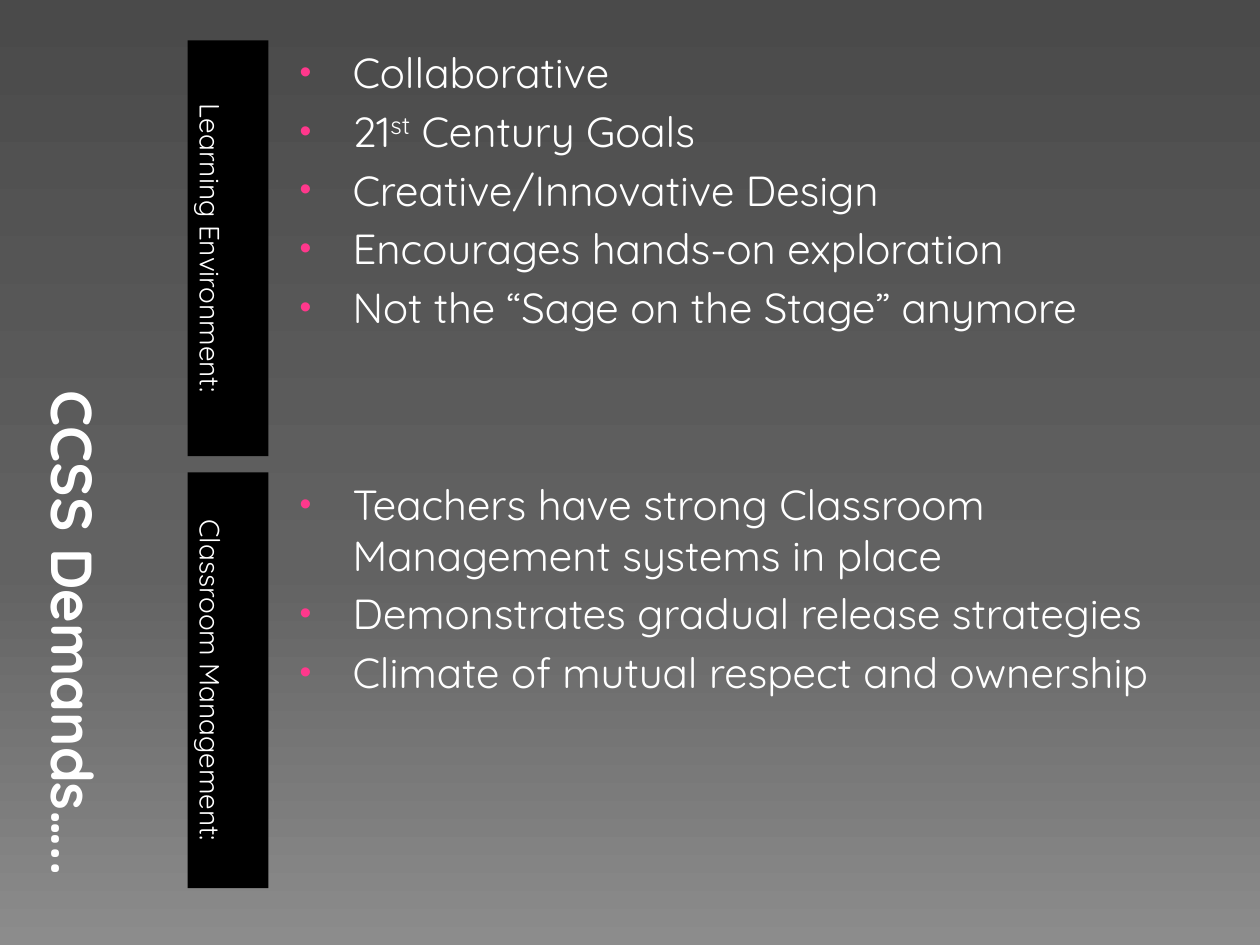
import pptx
import pptx.dml.color
import pptx.enum.shapes
import pptx.enum.text
import pptx.oxml
import pptx.oxml.ns
import pptx.util
from pptx.util import Inches

COLORS = {"text": "FFFFFF", "label": "000000", "bullet": "FF388C"}
BACKDROP = [(0, "4A4A4A"), (60, "626262"), (100, "8C8C8C")]
FONT = "Quicksand"
TOP, PANEL_HEIGHT, PITCH = 0.32, 3.3, 3.43

# Each section: label and bullets; a tuple holds text, superscript, text
SECTIONS = [
    ("Learning Environment:", [
        "Collaborative",
        ("21", "st", " Century Goals"),
        "Creative/Innovative Design",
        "Encourages hands-on exploration",
        "Not the “Sage on the Stage” anymore",
    ]),
    ("Classroom Management:", [
        "Teachers have strong Classroom Management systems in place",
        "Demonstrates gradual release strategies",
        "Climate of mutual respect and ownership",
    ]),
]


def rgb(name):
    return pptx.dml.color.RGBColor.from_string(COLORS[name])


def element(xml):
    namespace = pptx.oxml.ns.nsdecls("a")
    return pptx.oxml.parse_xml(xml.replace("XMLNS", namespace, 1))


class SlideBuilder:
    def __init__(self, page):
        self.page = page

    def background(self, stops):
        fill = self.page.background.fill
        fill.gradient()
        fill.gradient_angle = 270
        marks = "".join(
            f'<a:gs pos="{position * 1000}"><a:srgbClr val="{color}"/></a:gs>'
            for position, color in stops)
        properties = self.page.background._cSld.bg.bgPr
        old_stops = properties.find(".//" + pptx.oxml.ns.qn("a:gsLst"))
        old_stops.getparent().replace(
            old_stops, element(f"<a:gsLst XMLNS>{marks}</a:gsLst>"))

    def style(self, para, size, bold=False):
        para.font.name = FONT
        para.font.size = pptx.util.Pt(size)
        para.font.bold = bold
        para.font.color.rgb = rgb("text")

    def heading_text(self, shape, text, size, align, bold=False):
        frame = shape.text_frame
        frame.text = text
        frame.word_wrap = True
        frame.auto_size = pptx.enum.text.MSO_AUTO_SIZE.NONE
        frame.vertical_anchor = pptx.enum.text.MSO_ANCHOR.BOTTOM
        frame.paragraphs[0].alignment = align
        self.style(frame.paragraphs[0], size, bold)

    def title(self, text, left, top, width, height):
        # A quarter turn about the centre swaps width and height
        title = self.page.shapes.title
        shift = (height - width) / 2
        title.left, title.top = Inches(left - shift), Inches(top + shift)
        title.width, title.height = Inches(height), Inches(width)
        title.rotation = 90
        self.heading_text(title, text, 33, pptx.enum.text.PP_ALIGN.RIGHT, True)

    def label(self, text, left, top, width, height):
        box = self.page.shapes.add_shape(
            pptx.enum.shapes.MSO_SHAPE.RECTANGLE,
            Inches(left), Inches(top), Inches(width), Inches(height))
        box.shadow.inherit = False
        box.fill.solid()
        box.fill.fore_color.rgb = rgb("label")
        box.line.fill.background()
        self.heading_text(box, text, 16, pptx.enum.text.PP_ALIGN.CENTER)
        box.text_frame._txBody.bodyPr.set("vert", "vert")

    def bullets(self, items, left, top, width, height):
        box = self.page.shapes.add_textbox(
            Inches(left), Inches(top), Inches(width), Inches(height))
        frame = box.text_frame
        frame.word_wrap = True
        for index, item in enumerate(items):
            para = frame.add_paragraph() if index else frame.paragraphs[0]
            para.space_before = pptx.util.Pt(4.8)
            self.style(para, 24)
            self.bullet_mark(para)
            parts = (item,) if isinstance(item, str) else item
            for position, part in enumerate(parts):
                span = para.add_run()
                span.text = part
                if position == 1:
                    span.font._element.set("baseline", "30000")

    def bullet_mark(self, para):
        properties = para._p.get_or_add_pPr()
        properties.set("marL", str(Inches(0.49)))
        properties.set("indent", str(Inches(-0.42)))
        marks = [
            f'<a:buClr XMLNS><a:srgbClr val="{COLORS["bullet"]}"/></a:buClr>',
            '<a:buSzPct XMLNS val="80000"/>',
            '<a:buFont XMLNS typeface="Arial"/>',
            '<a:buChar XMLNS char="•"/>',
        ]
        defaults = properties.find(pptx.oxml.ns.qn("a:defRPr"))
        for mark in marks:
            defaults.addprevious(element(mark))


def main():
    deck = pptx.Presentation()
    deck.slide_width, deck.slide_height = Inches(10), Inches(7.5)
    builder = SlideBuilder(deck.slides.add_slide(deck.slide_layouts[5]))

    # Backdrop and sideways title
    builder.background(BACKDROP)
    builder.title("CCSS Demands…..", 0.27, TOP, 1.17, 6.73)

    # One label and one bullet list per section
    for row, (label, items) in enumerate(SECTIONS):
        top = TOP + row * PITCH
        builder.label(label, 1.49, top, 0.64, PANEL_HEIGHT)
        builder.bullets(items, 2.21, top, 7.5, PANEL_HEIGHT)

    deck.save("out.pptx")


if __name__ == "__main__":
    main()
